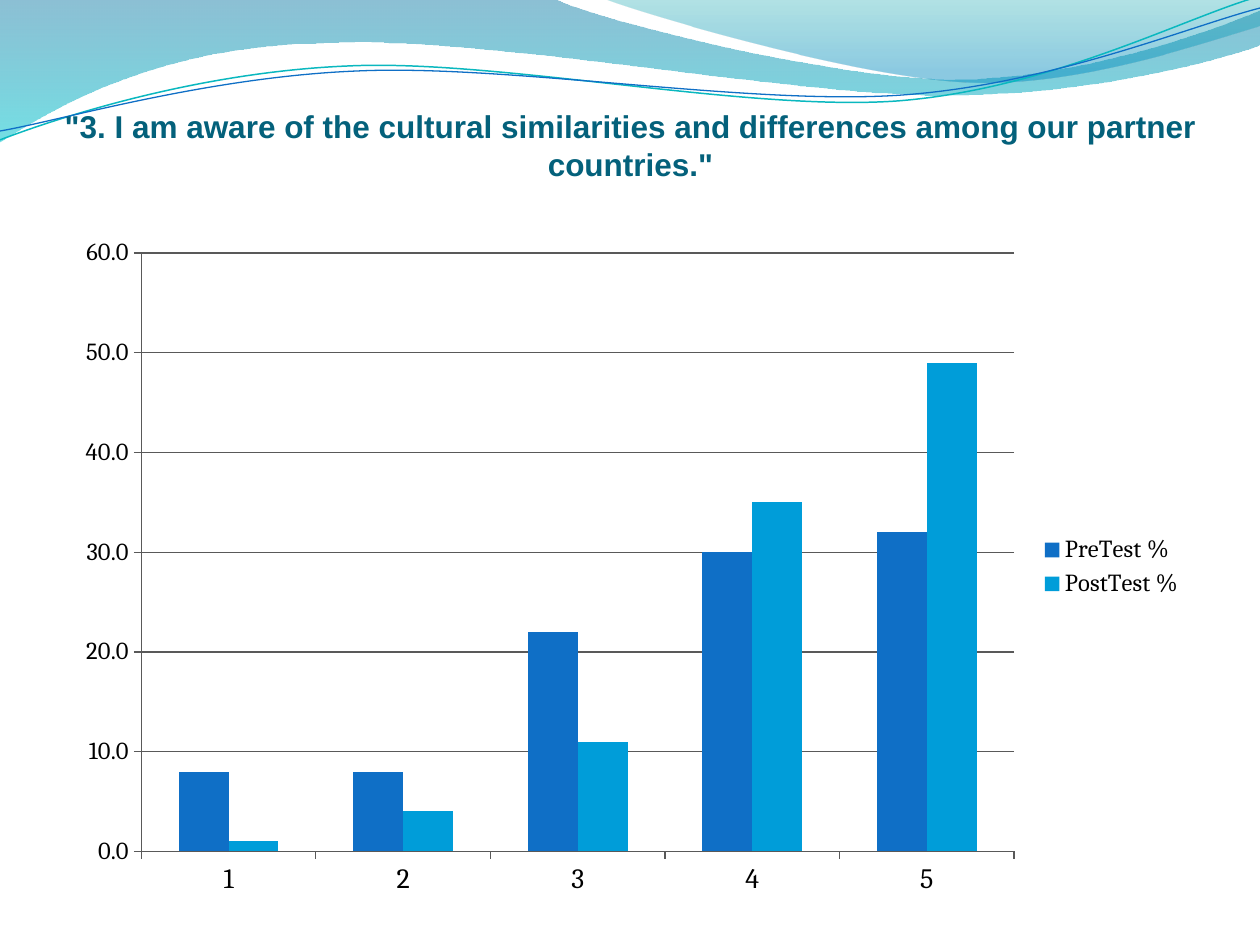
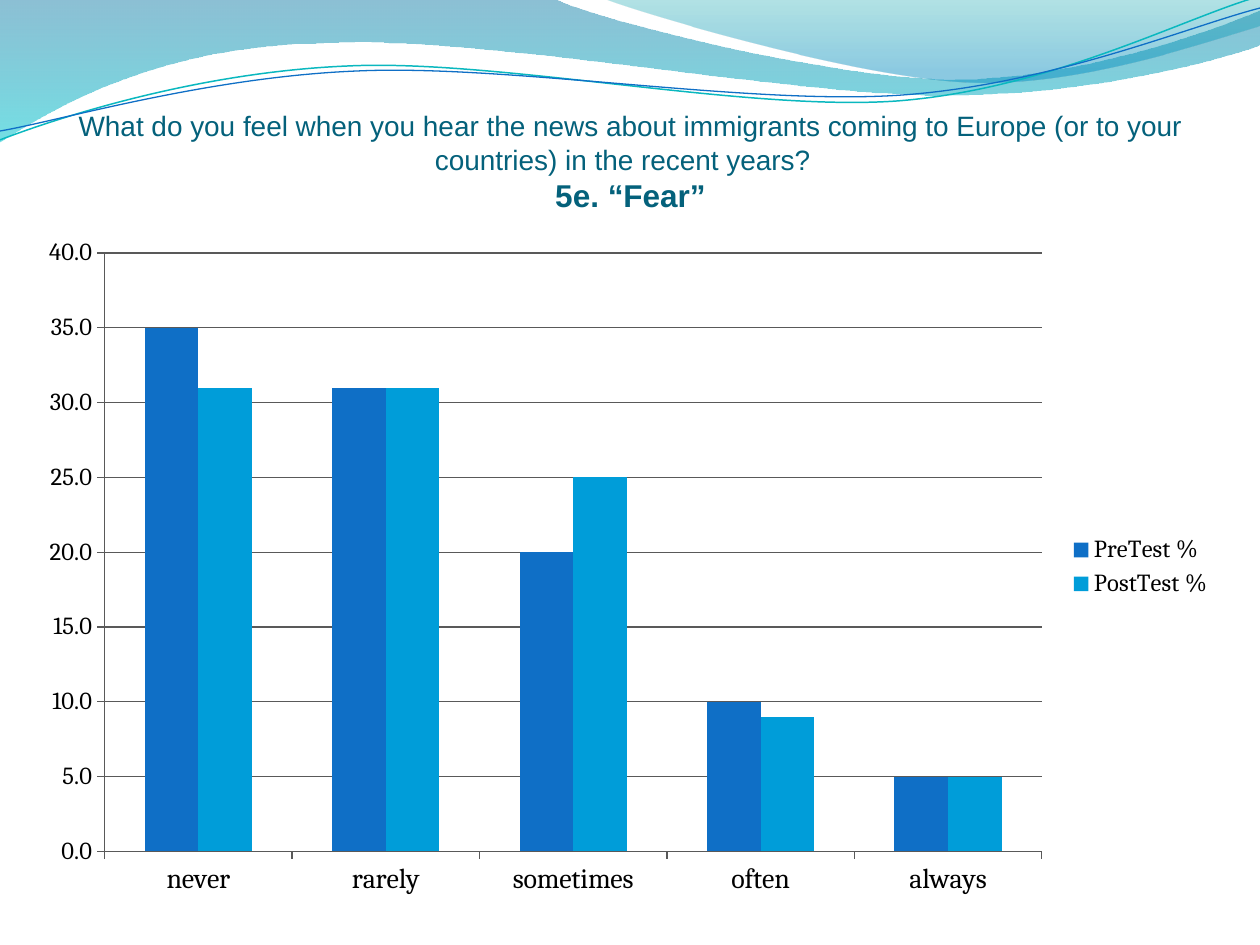
import math

from lxml import etree
from pptx import Presentation
from pptx import util as u
from pptx.chart.data import CategoryChartData
from pptx.dml.color import RGBColor
from pptx.enum import chart as ch, text
from pptx.oxml.ns import qn

SCALE = 914400 / 126  # EMU in one px
COLORS = {
    "title": "04617B", "text": "000000", "grid": "595959",
    "pre": "0F6FC6", "post": "009DD9", "teal_line": "0AB8BF",
    "band_top": "0074A1", "band_end": "00C6CF",
    "fold_top": "00A1A9", "fold_end": "008BBF",
}
TITLE_FONT, CHART_FONT = "Arial", "Cambria"
WAVE_TILT = 357.3

# Outlines in px: two numbers are a line to a point, six are a Bezier curve
BAND = [(0, 0), (554, -1), (600, 21, 837, 79, 955, 79),
        (1075, 79, 1207, 33, 1260, 11), (1261, 45),
        (1236, 55, 1096, 96, 940, 95), (784, 95, 481, 35, 324, 43),
        (163, 45, 58, 105, -1, 142), (0, 0)]
FOLD = [(604, -1), (641, 14, 859, 78, 969, 82),
        (1079, 87, 1211, 40, 1260, 26), (1260, 0), (604, -1)]
TEAL_WAVE = [(0, 140), (60, 117, 199, 72, 349, 66),
             (498, 59, 747, 112, 898, 101), (1050, 89, 1182, 19, 1257, -3)]
BLUE_WAVE = [(0, 131), (59, 121, 207, 77, 357, 71),
             (508, 64, 752, 106, 903, 95), (1053, 84, 1190, 26, 1260, 8)]


def px(n):
    return u.Emu(round(n * SCALE))


def rgb(name):
    return RGBColor.from_string(COLORS[name])


def turn(point, center, degrees):
    a = math.radians(degrees)
    dx, dy = point[0] - center[0], point[1] - center[1]
    return (center[0] + dx * math.cos(a) - dy * math.sin(a),
            center[1] + dx * math.sin(a) + dy * math.cos(a))


def add_outline(slide, outline, close, center=(0, 0), tilt=0):
    """Freeform whose curves are true Beziers, tilted about its center."""
    points = [turn(seg[i:i + 2], center, -tilt)
              for seg in outline for i in range(0, len(seg), 2)]
    points = [(px(x), px(y)) for x, y in points]
    fb = slide.shapes.build_freeform(*points[0])
    fb.add_line_segments(points[1:], close=close)
    sp = fb.convert_to_shape()
    sp.shadow.inherit = False
    sp.rotation = tilt

    # Join each three control points into one curve
    lines = iter(list(sp.element.iter(qn("a:lnTo"))))
    for seg in outline[1:]:
        line = next(lines)
        if len(seg) == 6:
            line.tag = qn("a:cubicBezTo")
            for _ in range(2):
                extra = next(lines)
                line.append(extra[0])
                extra.getparent().remove(extra)
    return sp


def add_band(slide, outline, stops):
    """Closed shape with a downward gradient of (position, colour, alpha %)."""
    sp = add_outline(slide, outline, True)
    sp.line.fill.background()
    sp.fill.gradient()
    sp.fill.gradient_angle = 270
    for stop, (position, color, _) in zip(sp.fill.gradient_stops, stops):
        stop.position = position
        stop.color.rgb = rgb(color)
    grad = sp.element.spPr.find(qn("a:gradFill"))
    for clr, (_, _, alpha) in zip(grad.iter(qn("a:srgbClr")), stops):
        etree.SubElement(clr, qn("a:alpha")).set("val", str(alpha * 1000))
    return sp


def add_wave(slide, outline, center, color, width):
    sp = add_outline(slide, outline, False, center, WAVE_TILT)
    sp.fill.background()
    sp.line.color.rgb = rgb(color)
    sp.line.width = u.Pt(width)
    return sp


def set_master(prs, slide):
    """Draw the header waves, move them to the master, set the title size."""
    master = prs.slide_master.element
    waves = [
        add_band(slide, BAND, [(0, "band_top", 45), (1, "band_end", 55)]),
        add_band(slide, FOLD, [(0, "fold_top", 30), (0.8, "fold_end", 45)]),
        add_wave(slide, TEAL_WAVE, (629, 72), "teal_line", 0.85),
        add_wave(slide, BLUE_WAVE, (629, 74), "pre", 0.75),
    ]
    for sp in waves:
        master.cSld.spTree.append(sp.element)
    levels = (qn("p:titleStyle"), qn("a:lvl1pPr"), qn("a:defRPr"))
    master.find(".//" + "/".join(levels)).set("sz", "1600")


def set_title(slide, top, lines):
    """Fill the title with lines of (text, size, bold)."""
    sp = slide.shapes.title
    sp.left, sp.top, sp.width, sp.height = map(px, (35, top, 1191, 117))
    tf = sp.text_frame
    tf.word_wrap = True
    tf.auto_size = text.MSO_AUTO_SIZE.NONE
    tf.vertical_anchor = text.MSO_ANCHOR.BOTTOM
    tf.margin_left = tf.margin_right = tf.margin_bottom = 0
    tf.margin_top = px(6)
    p = tf.paragraphs[0]
    p.alignment = text.PP_ALIGN.CENTER
    for i, (line, size, bold) in enumerate(lines):
        if i:
            p.add_line_break()
        r = p.add_run()
        r.text = line
        set_font(r.font, TITLE_FONT, size, "title")
        r.font.bold = bold


def set_font(font, name, size, color):
    font.name = name
    font.size = u.Pt(size)
    font.color.rgb = rgb(color)


def set_line(fmt):
    fmt.line.color.rgb = rgb("grid")
    fmt.line.width = u.Pt(0.75)


def add_test_chart(slide, left, width, cats, pre, post, top_value, step):
    data = CategoryChartData(number_format="0.0")
    data.categories = cats
    data.add_series("PreTest %", pre)
    data.add_series("PostTest %", post)
    chart = slide.shapes.add_chart(
        ch.XL_CHART_TYPE.COLUMN_CLUSTERED,
        px(left), px(225), px(width), px(684), data).chart
    set_font(chart.font, CHART_FONT, 10, "text")
    chart.has_title = False

    # Columns
    plot = chart.plots[0]
    plot.gap_width, plot.overlap = 150, 0
    plot.vary_by_categories = False
    for series, color in zip(plot.series, ("pre", "post")):
        series.format.fill.solid()
        series.format.fill.fore_color.rgb = rgb(color)
        series.invert_if_negative = False

    # Axes
    for axis, size in ((chart.category_axis, 16), (chart.value_axis, 14)):
        axis.major_tick_mark = ch.XL_TICK_MARK.OUTSIDE
        axis.minor_tick_mark = ch.XL_TICK_MARK.NONE
        set_font(axis.tick_labels.font, CHART_FONT, size, "text")
        set_line(axis.format)
    values = chart.value_axis
    values.minimum_scale, values.maximum_scale = 0, top_value
    values.major_unit = step
    values.tick_labels.number_format = "0.0"
    values.tick_labels.number_format_is_linked = False
    values.has_major_gridlines = True
    set_line(values.major_gridlines.format)

    # Legend
    chart.has_legend = True
    chart.legend.position = ch.XL_LEGEND_POSITION.RIGHT
    chart.legend.include_in_layout = False
    set_font(chart.legend.font, CHART_FONT, 14, "text")


def main():
    prs = Presentation()
    prs.slide_width, prs.slide_height = px(1260), px(945)
    title_only = prs.slide_layouts[5]

    # Cultural awareness
    s = prs.slides.add_slide(title_only)
    set_master(prs, s)
    set_title(s, 66, [('"3. I am aware of the cultural similarities and '
                       'differences among our partner countries."', 18, True)])
    add_test_chart(s, 63, 1134, ["1", "2", "3", "4", "5"],
                   [8, 8, 22, 30, 32], [1, 4, 11, 35, 49], 60, 10)

    # Feelings about immigration news
    s = prs.slides.add_slide(title_only)
    set_title(s, 97, [("What do you feel when you hear the news about immigrants "
                       "coming to Europe (or to your countries) in the recent "
                       "years?  ", 16, False),
                      ("5e. “Fear”", 18, True)])
    add_test_chart(s, 25, 1201,
                   ["never", "rarely", "sometimes", "often", "always"],
                   [35, 31, 20, 10, 5], [31, 31, 25, 9, 5], 40, 5)

    prs.save("out.pptx")


if __name__ == "__main__":
    main()
